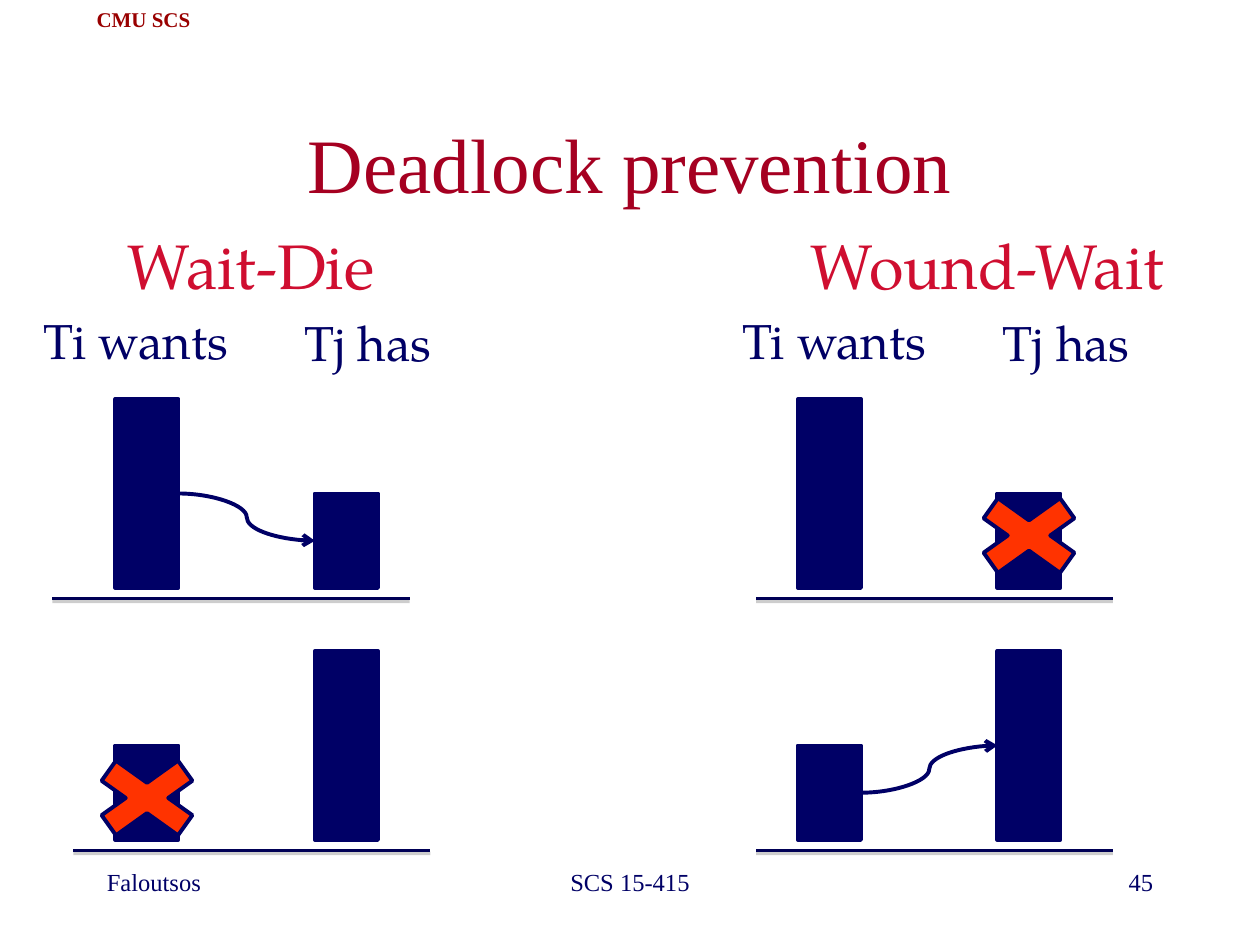
import pptx
import pptx.dml.color
import pptx.enum.shapes
import pptx.enum.text
import pptx.oxml
import pptx.oxml.ns
import pptx.util
from pptx.util import Pt

NAVY = pptx.dml.color.RGBColor(0x00, 0x00, 0x66)
BASELINE_NAVY = pptx.dml.color.RGBColor(0x00, 0x00, 0x56)
CRIMSON = pptx.dml.color.RGBColor(0xCF, 0x0E, 0x30)
TITLE_RED = pptx.dml.color.RGBColor(0xA5, 0x00, 0x21)
HEADER_RED = pptx.dml.color.RGBColor(0x99, 0x00, 0x00)
ORANGE = pptx.dml.color.RGBColor(0xFF, 0x33, 0x00)
SERIF = "Times New Roman"
PAGELLA = "TeX Gyre Pagella"
ALIGN = pptx.enum.text.PP_ALIGN
ANCHOR = pptx.enum.text.MSO_ANCHOR
SHAPE = pptx.enum.shapes.MSO_SHAPE
CONNECTOR = pptx.enum.shapes.MSO_CONNECTOR

BAR_WIDTH, TALL, SHORT = 36, 108, 54
BAR_GAP = 114
BASELINE_WIDTH = 204
CROSS_WIDTH, CROSS_HEIGHT = 84, 60
SHADOW = (
    '<a:outerShdw blurRad="0" dist="20000" dir="5400000" rotWithShape="0">'
    '<a:srgbClr val="808080"><a:alpha val="38000"/></a:srgbClr></a:outerShdw>'
)


def append_xml(parent, tag, attributes="", content=""):
    namespace = pptx.oxml.ns.nsdecls("a")
    parent.append(pptx.oxml.parse_xml(
        f"<a:{tag} {namespace} {attributes}>{content}</a:{tag}>"))


def add_label(slide, words, box, size, color, font=SERIF, align=ALIGN.LEFT,
              anchor=ANCHOR.TOP, bold=False, wrap=False):
    label = slide.shapes.add_textbox(*map(Pt, box))
    frame = label.text_frame
    frame.text = words
    frame.word_wrap = wrap
    frame.vertical_anchor = anchor
    paragraph = frame.paragraphs[0]
    paragraph.alignment = align
    run_font = paragraph.runs[0].font
    run_font.name = font
    run_font.size = Pt(size)
    run_font.bold = bold
    run_font.color.rgb = color


def add_block(slide, kind, box, fill):
    block = slide.shapes.add_shape(kind, *map(Pt, box))
    block.shadow.inherit = False
    block.fill.solid()
    block.fill.fore_color.rgb = fill
    block.line.color.rgb = NAVY
    block.line.width = Pt(2.25)
    append_xml(block.line._get_or_add_ln(), "round")


def add_bar(slide, left, floor, height):
    add_block(slide, SHAPE.RECTANGLE,
              (left, floor - height, BAR_WIDTH, height), NAVY)


def add_cross(slide, bar_left, top):
    left = bar_left + (BAR_WIDTH - CROSS_WIDTH) / 2
    add_block(slide, SHAPE.MATH_MULTIPLY,
              (left, top, CROSS_WIDTH, CROSS_HEIGHT), ORANGE)


def add_line(slide, kind, start, end, color, width, effect=""):
    line = slide.shapes.add_connector(kind, *map(Pt, start + end))
    line.line.color.rgb = color
    line.line.width = Pt(width)
    append_xml(line._element.spPr, "effectLst", content=effect)
    return line


def add_baseline(slide, left, y):
    add_line(slide, CONNECTOR.STRAIGHT, (left, y), (left + BASELINE_WIDTH, y),
             BASELINE_NAVY, 2, SHADOW)


def add_wait_arrow(slide, bar_left, floor, from_height, to_height):
    start = (bar_left + BAR_WIDTH, floor - from_height / 2)
    end = (bar_left + BAR_GAP, floor - to_height / 2)
    arrow = add_line(slide, CONNECTOR.CURVE, start, end, NAVY, 2.25)
    append_xml(arrow.line._get_or_add_ln(), "tailEnd", 'type="arrow"')


def add_scheme(slide, name, name_width, ti_left, bars_left, baseline_lefts):
    add_label(slide, name, (bars_left, 126, name_width, 51), 36, CRIMSON, PAGELLA)
    add_label(slide, "Ti wants", (ti_left, 174, 121, 41), 28, NAVY, PAGELLA)
    add_label(slide, "Tj has", (ti_left + 149, 175, 88, 41), 28, NAVY, PAGELLA)
    cases = ((336, TALL, SHORT), (480, SHORT, TALL))
    for (floor, ti_height, tj_height), left in zip(cases, baseline_lefts):
        add_bar(slide, bars_left, floor, ti_height)
        add_bar(slide, bars_left + BAR_GAP, floor, tj_height)
        add_baseline(slide, left, floor + 6)


def main():
    deck = pptx.Presentation()
    deck.slide_width, deck.slide_height = Pt(720), Pt(540)
    slide = deck.slides.add_slide(deck.slide_layouts[6])

    add_label(slide, "CMU SCS", (48, 0, 68, 22), 12, HEADER_RED,
              align=ALIGN.CENTER, anchor=ANCHOR.MIDDLE, bold=True)
    add_label(slide, "Deadlock prevention", (54, 48, 612, 90), 44, TITLE_RED,
              align=ALIGN.CENTER, anchor=ANCHOR.MIDDLE, wrap=True)
    footers = (("Faloutsos", 54, 150, ALIGN.LEFT),
               ("SCS 15-415", 246, 228, ALIGN.CENTER),
               ("45", 516, 150, ALIGN.RIGHT))
    for words, left, width, align in footers:
        add_label(slide, words, (left, 492, width, 36), 14, NAVY,
                  align=align, wrap=True)

    wait_die, wound_wait = 66, 456
    add_scheme(slide, "Wait-Die", 156, 18, wait_die, (30, 42))
    add_scheme(slide, "Wound-Wait", 218, 417, wound_wait, (432, 432))
    add_wait_arrow(slide, wait_die, 336, TALL, SHORT)
    add_wait_arrow(slide, wound_wait, 480, SHORT, TALL)
    add_cross(slide, wait_die, 426)
    add_cross(slide, wound_wait + BAR_GAP, 276)

    deck.save("out.pptx")


if __name__ == "__main__":
    main()
